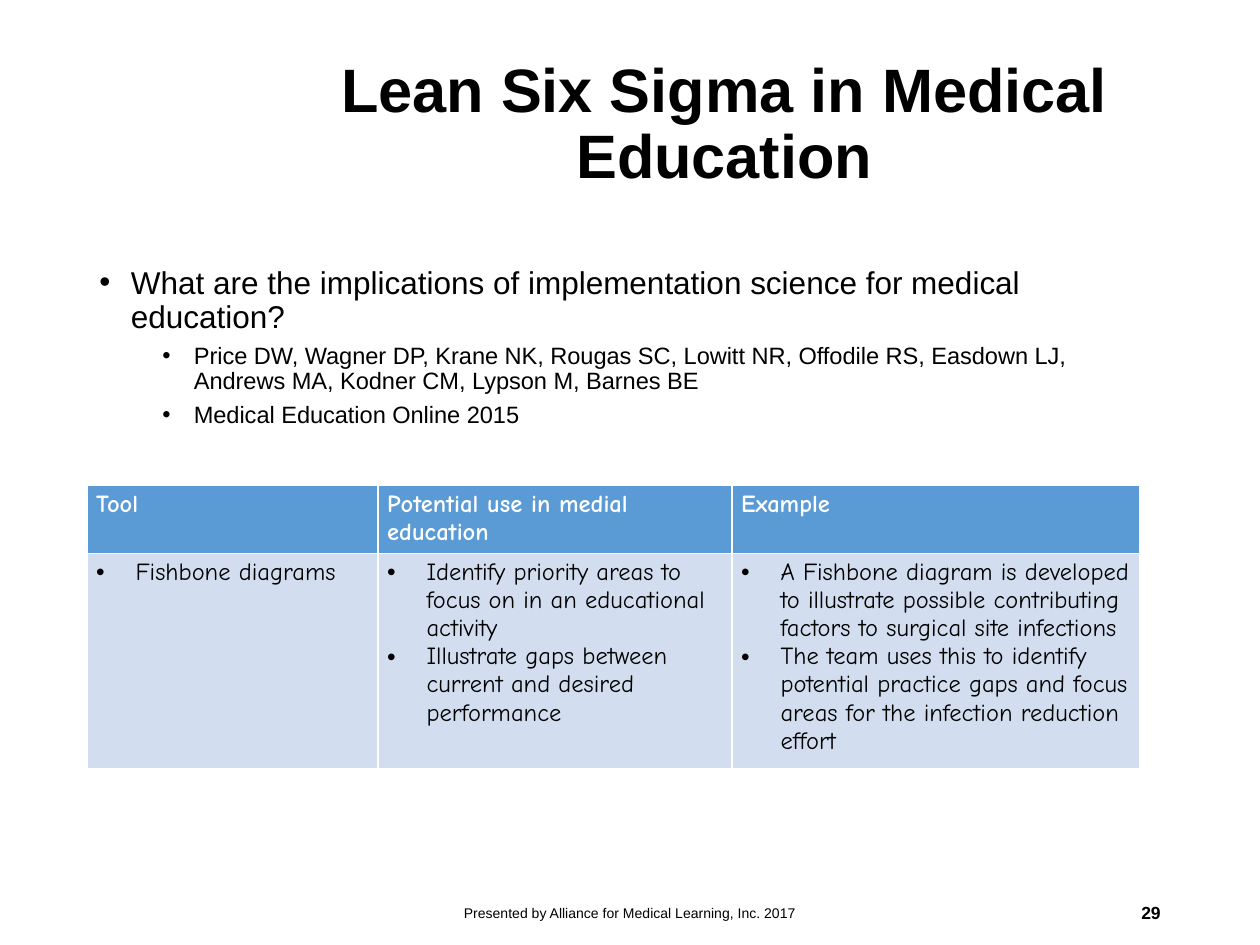
from lxml.etree import SubElement
from pptx import Presentation
from pptx.dml.color import RGBColor
from pptx.enum.text import MSO_ANCHOR as Anchor, PP_ALIGN as Align
from pptx.oxml.ns import qn
from pptx.util import Pt

# Content
TITLE = "Lean Six Sigma in Medical Education"
POINTS = [
    (0, "What are the implications of implementation science for medical education?"),
    (1, "Price DW, Wagner DP, Krane NK, Rougas SC, Lowitt NR, Offodile RS, "
        "Easdown LJ, Andrews MA, Kodner CM, Lypson M, Barnes BE"),
    (1, "Medical Education Online 2015"),
]
HEADINGS = ["Tool", "Potential use in medial education", "Example"]
DETAILS = [
    ["Fishbone diagrams"],
    ["Identify priority areas to focus on in an educational activity",
     "Illustrate gaps between current and desired performance"],
    ["A Fishbone diagram is developed to illustrate possible contributing "
     "factors to surgical site infections",
     "The team uses this to identify potential practice gaps and focus areas "
     "for the infection reduction effort"],
]
FOOTER = "Presented by Alliance for Medical Learning, Inc. 2017"
PAGE_NUMBER = "29"

# Formats
COLORS = {"text": "000000", "white": "FFFFFF", "header": "5B9BD5", "body": "D2DEEF"}
LEVELS = [{"size": 18, "indent": 18, "before": 10},
          {"size": 13.5, "indent": 54, "before": 5}]
COLUMN_WIDTHS = [166.3, 202.3, 233.3]
ROW_HEIGHTS = [38, 118.8]
CELL_MARGINS = {"margin_left": 5.3, "margin_right": 5.3,
                "margin_top": 2.65, "margin_bottom": 2.65}


def style(para, size, name="Arial", color="text", bold=False, **layout):
    for key, value in layout.items():
        setattr(para, key, value)
    for key, value in {"size": Pt(size), "name": name, "bold": bold}.items():
        setattr(para.font, key, value)
    para.font.color.rgb = RGBColor.from_string(COLORS[color])


def add_bullet(para, left, hanging):
    props = para._p.get_or_add_pPr()
    props.set("marL", str(Pt(left)))
    props.set("indent", str(-Pt(hanging)))
    SubElement(props, qn("a:buFont"), typeface="Arial")
    SubElement(props, qn("a:buChar"), char="•")


def paragraphs(frame, texts):
    for index, text in enumerate(texts):
        para = frame.add_paragraph() if index else frame.paragraphs[0]
        para.text = text
        yield index, para


def add_box(page, bounds, anchor=Anchor.MIDDLE):
    frame = page.shapes.add_textbox(*map(Pt, bounds)).text_frame
    frame.word_wrap = True
    frame.vertical_anchor = anchor
    return frame


def add_line(page, bounds, text, **formats):
    for _, para in paragraphs(add_box(page, bounds), [text]):
        style(para, **formats)


def add_border(cell, side, width):
    line = SubElement(cell._tc.get_or_add_tcPr(), qn(f"a:{side}"), w=str(Pt(width)))
    fill = SubElement(line, qn("a:solidFill"))
    SubElement(fill, qn("a:srgbClr"), val=COLORS["white"])


def fill_cell(cell, texts, is_header):
    for key, value in CELL_MARGINS.items():
        setattr(cell, key, Pt(value))
    for side in ("lnL", "lnR", "lnT", "lnB"):
        add_border(cell, side, 1)
    cell.fill.solid()
    cell.fill.fore_color.rgb = RGBColor.from_string(
        COLORS["header" if is_header else "body"])
    for _, para in paragraphs(cell.text_frame, texts):
        if not is_header:
            add_bullet(para, 22.5, 22.5)
        style(para, 14, "Comic Neue", "white" if is_header else "text", is_header)


deck = Presentation()
deck.slide_width, deck.slide_height = Pt(720), Pt(540)
page = deck.slides.add_slide(deck.slide_layouts[6])

# Title
add_line(page, (157, 19.4, 514, 104.4), TITLE, size=35, bold=True,
         alignment=Align.CENTER, line_spacing=0.9)

# Bulleted citation
body = add_box(page, (49.7, 149, 620.6, 257), Anchor.TOP)
for index, para in paragraphs(body, [text for _, text in POINTS]):
    para.level = POINTS[index][0]
    level = LEVELS[para.level]
    para.line_spacing = 0.9
    if index:
        para.space_before = Pt(level["before"])
    add_bullet(para, level["indent"], 18)
    style(para, level["size"])

# Tool table
table = page.shapes.add_table(2, 3, Pt(49.7), Pt(277.4), Pt(sum(COLUMN_WIDTHS)),
                              Pt(sum(ROW_HEIGHTS))).table
for row, height in zip(table.rows, ROW_HEIGHTS):
    row.height = Pt(height)
for number, width in enumerate(COLUMN_WIDTHS):
    table.columns[number].width = Pt(width)
    fill_cell(table.cell(0, number), [HEADINGS[number]], True)
    fill_cell(table.cell(1, number), DETAILS[number], False)

# Footer
add_line(page, (238.3, 507, 243.4, 28.8), FOOTER, size=8, alignment=Align.CENTER)
add_line(page, (508.3, 507, 162, 28.8), PAGE_NUMBER, size=10, bold=True,
         alignment=Align.RIGHT)

deck.save("out.pptx")
